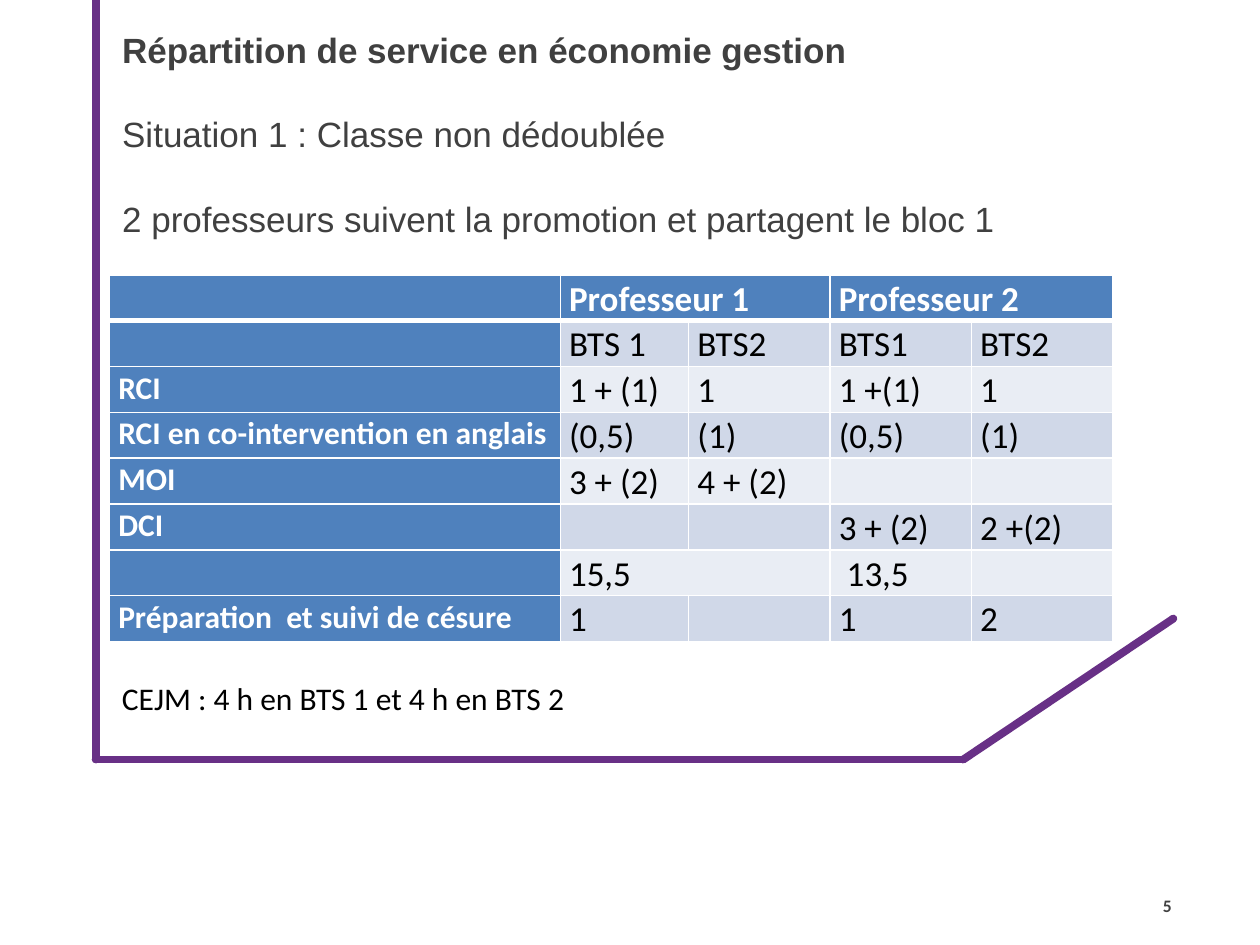
import pptx
import pptx.dml.color
import pptx.enum.shapes
import pptx.enum.text
import pptx.oxml
import pptx.oxml.ns
import pptx.util

Pt = pptx.util.Pt
ALIGN = pptx.enum.text.PP_ALIGN
ANCHOR = pptx.enum.text.MSO_ANCHOR

# Content
TITLE = [
    "Répartition de service en économie gestion",
    "Situation 1 : Classe non dédoublée",
    "2 professeurs suivent la promotion et partagent le bloc 1",
]
ROWS = [
    ["", "Professeur 1", "", "Professeur 2", ""],
    ["", "BTS 1", "BTS2", "BTS1", "BTS2"],
    ["RCI", "1 + (1)", "1", "1 +(1)", "1"],
    ["RCI en co-intervention en anglais", "(0,5)", "(1)", "(0,5)", "(1)"],
    ["MOI", "3 + (2)", "4 + (2)", "", ""],
    ["DCI", "", "", "3 + (2)", "2 +(2)"],
    ["", "15,5", "", " 13,5", ""],
    ["Préparation  et suivi de césure", "1", "", "1", "2"],
]
MERGES = [(0, 1), (0, 3), (6, 1)]  # row, first of two columns
NOTE = "CEJM : 4 h en BTS 1 et 4 h en BTS 2"
NUMBER = "5"

# Layout and colours
COLUMNS = [257.6, 73.4, 80.8, 80.8, 80.8]
ROW_HEIGHT = 26.2
FRAME = [(54.7, 0), (54.7, 434), (550.5, 434), (670.5, 353.5)]
PURPLE, GREY, BLUE = "683086", "404040", "4F81BD"
BANDS = ["E9EDF4", "D0D8E8"]


def color(value):
    return pptx.dml.color.RGBColor.from_string(value)


def style(p, size, font, value, bold=False):
    for r in p.runs:
        r.font.size = Pt(size)
        r.font.name = font
        r.font.bold = bold
        r.font.color.rgb = color(value)


def add_text(s, box, text, size, value, bold=False, align=ALIGN.LEFT, anchor=ANCHOR.TOP):
    tf = s.shapes.add_textbox(*map(Pt, box)).text_frame
    tf.word_wrap = True
    tf.vertical_anchor = anchor
    tf.text = text
    p = tf.paragraphs[0]
    p.alignment = align
    style(p, size, "Calibri", value, bold)


def set_borders(cell, bottom):
    tcPr = cell._tc.get_or_add_tcPr()
    widths = {"L": 1, "R": 1, "T": 1, "B": bottom}
    for i, (side, width) in enumerate(widths.items()):
        tcPr.insert(i, pptx.oxml.parse_xml(
            f'<a:ln{side} {pptx.oxml.ns.nsdecls("a")} w="{Pt(width)}">'
            f'<a:solidFill><a:srgbClr val="FFFFFF"/></a:solidFill></a:ln{side}>'))


def add_frame(s):
    for start, end in zip(FRAME, FRAME[1:]):
        line = s.shapes.add_connector(
            pptx.enum.shapes.MSO_CONNECTOR.STRAIGHT, *map(Pt, start + end))
        line.line.color.rgb = color(PURPLE)
        line.line.width = Pt(4.5)
        line.line._get_or_add_ln().set("cap", "rnd")
        line._element.spPr.append(
            pptx.oxml.parse_xml(f'<a:effectLst {pptx.oxml.ns.nsdecls("a")}/>'))


def fill_title(title):
    title.left, title.top, title.width, title.height = map(Pt, (62.6, -98.6, 612, 396.7))
    tf = title.text_frame
    tf.text = "\n".join(TITLE)
    tf.word_wrap = True
    tf.auto_size = pptx.enum.text.MSO_AUTO_SIZE.NONE
    tf.vertical_anchor = ANCHOR.MIDDLE
    tf.margin_bottom = Pt(50)
    for i, p in enumerate(tf.paragraphs):
        p.alignment = ALIGN.LEFT
        p.line_spacing = Pt(24)
        p.space_before = Pt(24 if i else 0)
        style(p, 20, "Arial", GREY, bold=i == 0)


def add_hours_table(s):
    table = s.shapes.add_table(
        len(ROWS), len(COLUMNS), Pt(62.6), Pt(157),
        Pt(sum(COLUMNS)), Pt(ROW_HEIGHT * len(ROWS))).table
    for column, width in zip(table.columns, COLUMNS):
        column.width = Pt(width)
    for i, row in enumerate(ROWS):
        table.rows[i].height = Pt(ROW_HEIGHT)
        for j, text in enumerate(row):
            cell = table.cell(i, j)
            head = i == 0 or j == 0
            cell.margin_left = cell.margin_right = Pt(5)
            cell.margin_top = cell.margin_bottom = 0
            cell.text = text
            p = cell.text_frame.paragraphs[0]
            p.line_spacing = 1.07
            style(p, 20 if j else 18, "Calibri", "FFFFFF" if head else "000000", head)
            cell.fill.solid()
            cell.fill.fore_color.rgb = color(BLUE if head else BANDS[i % 2])
            set_borders(cell, 1 if i else 3)
    for i, j in MERGES:
        table.cell(i, j).merge(table.cell(i, j + 1))


def main():
    prs = pptx.Presentation()
    prs.slide_width, prs.slide_height = Pt(720), Pt(540)
    s = prs.slides.add_slide(prs.slide_layouts[5])
    add_frame(s)
    fill_title(s.shapes.title)
    add_text(s, (645, 503.3, 31.7, 28.8), NUMBER, 10, GREY, True, ALIGN.RIGHT, ANCHOR.MIDDLE)
    add_hours_table(s)
    add_text(s, (62.6, 384.5, 317.5, 29), NOTE, 18, "000000")
    prs.save("out.pptx")


if __name__ == "__main__":
    main()
